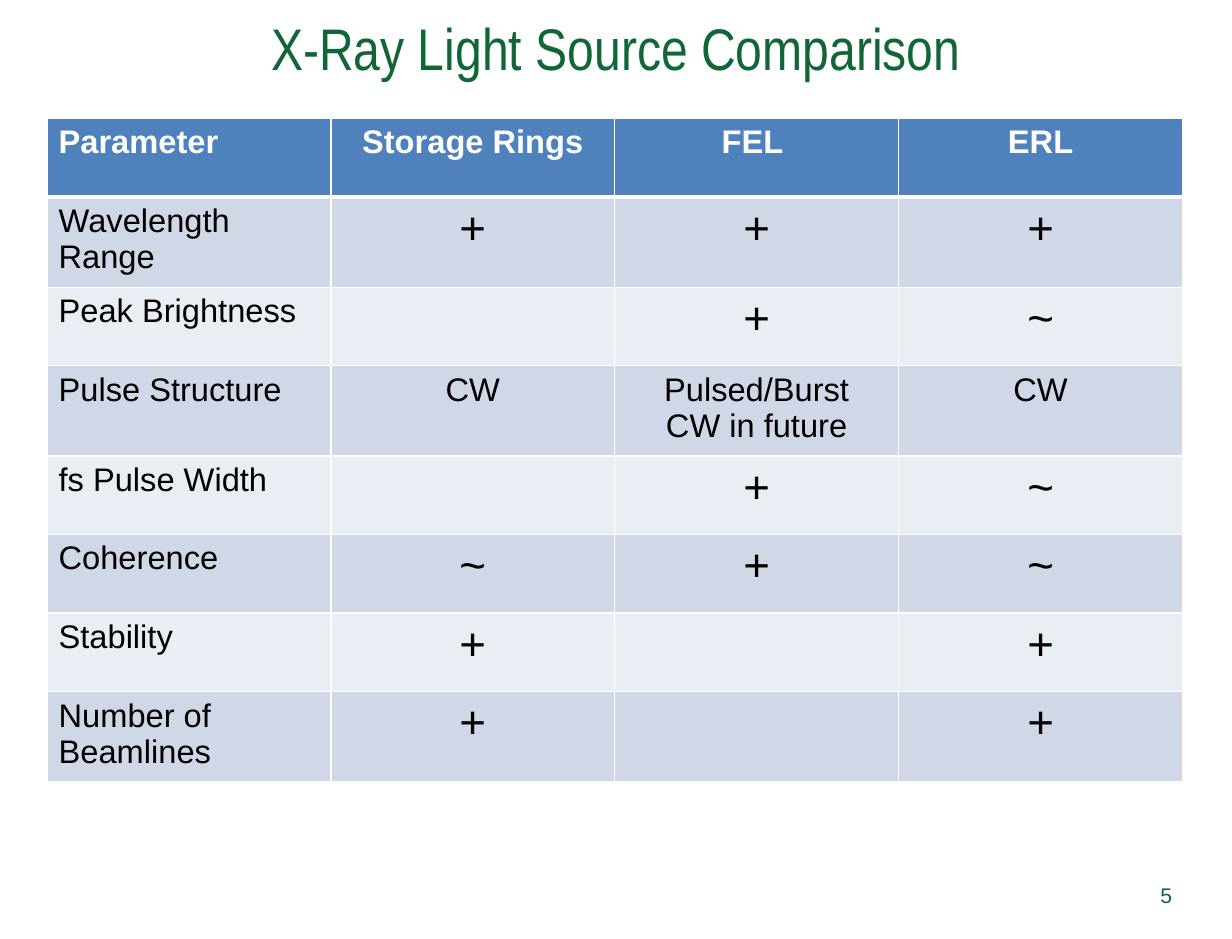
from dataclasses import dataclass

from lxml.etree import SubElement
from pptx import Presentation
from pptx.dml.color import RGBColor as Rgb
from pptx.enum.text import MSO_ANCHOR as Anchor, PP_ALIGN as Align
from pptx.oxml.ns import qn
from pptx.util import Inches, Pt


@dataclass(frozen=True)
class Theme:
    """Colours, fonts and type sizes of the slide."""
    green: str = "106636"
    header: str = "4F81BD"
    bands: tuple = ("D0D8E8", "E9EDF4")
    white: str = "FFFFFF"
    black: str = "000000"
    title_font: str = "Arial Narrow"
    body_font: str = "Arial"
    title_size: int = 36
    body_size: int = 20
    mark_size: int = 28
    number_size: int = 13


THEME = Theme()
MARKS = ("+", "~")
COMPARISON = [
    ("Parameter", "Storage Rings", "FEL ", "ERL"),
    ("Wavelength Range", "+", "+", "+"),
    ("Peak Brightness", "", "+", "~"),
    ("Pulse Structure", "CW", "Pulsed/Burst\nCW in future", "CW"),
    ("fs Pulse Width", "", "+", "~"),
    ("Coherence", "~", "+", "~"),
    ("Stability", "+", "", "+"),
    ("Number of Beamlines", "+", "", "+"),
]


def write(frame, text, size=THEME.body_size, color=THEME.black,
          font=THEME.body_font, bold=False, align=Align.LEFT):
    """Fill a text frame with formatted text, one paragraph per line."""
    frame.text = text
    for paragraph in frame.paragraphs:
        paragraph.alignment = align
        paragraph.font.size = Pt(size)
        for run in paragraph.runs:
            run.font.size = Pt(size)
            run.font.name = font
            run.font.bold = bold
            run.font.color.rgb = Rgb.from_string(color)


def add_label(slide, text, left, top, width, height, **style):
    """Add a vertically centred text box."""
    box = slide.shapes.add_textbox(*map(Inches, (left, top, width, height)))
    frame = box.text_frame
    frame.word_wrap = True
    frame.vertical_anchor = Anchor.MIDDLE
    frame.margin_left = frame.margin_right = Inches(0.11)
    write(frame, text, **style)


def add_borders(cell, bottom=1, top=1):
    """Draw white borders of the given point widths around a cell."""
    properties = cell._tc.get_or_add_tcPr()
    for side, width in zip("LRTB", (1, 1, top, bottom)):
        line = SubElement(properties, qn(f"a:ln{side}"), w=str(Pt(width)))
        paint = SubElement(line, qn("a:solidFill"))
        SubElement(paint, qn("a:srgbClr"), val=THEME.white)


def add_comparison(slide, left, top, column_width, row_height):
    """Add the banded comparison table."""
    rows, columns = len(COMPARISON), len(COMPARISON[0])
    table = slide.shapes.add_table(
        rows, columns, Inches(left), Inches(top),
        Inches(column_width * columns), Inches(row_height * rows)).table
    for column in table.columns:
        column.width = Inches(column_width)
    for r, values in enumerate(COMPARISON):
        table.rows[r].height = Inches(row_height)
        is_header = r == 0
        fill = THEME.header if is_header else THEME.bands[(r - 1) % 2]
        for c, value in enumerate(values):
            cell = table.cell(r, c)
            add_borders(cell, bottom=3 if is_header else 1, top=3 if r == 1 else 1)
            cell.fill.solid()
            cell.fill.fore_color.rgb = Rgb.from_string(fill)
            write(cell.text_frame, value, bold=is_header,
                  size=THEME.mark_size if value in MARKS else THEME.body_size,
                  color=THEME.white if is_header else THEME.black,
                  align=Align.CENTER if c else Align.LEFT)


def main():
    """Build and save the slide."""
    deck = Presentation()
    deck.slide_width, deck.slide_height = Inches(10.5), Inches(8)
    slide = deck.slides.add_slide(deck.slide_layouts[6])
    add_label(slide, "X-Ray Light Source Comparison", 0, -0.26, 10.5, 1.33,
              size=THEME.title_size, color=THEME.green,
              font=THEME.title_font, align=Align.CENTER)
    add_label(slide, "5", 9.66, 7.41, 0.44, 0.43, size=THEME.number_size,
              color=THEME.green, align=Align.RIGHT)
    add_comparison(slide, left=0.4, top=1.01, column_width=2.42, row_height=0.67)
    deck.save("out.pptx")


if __name__ == "__main__":
    main()
